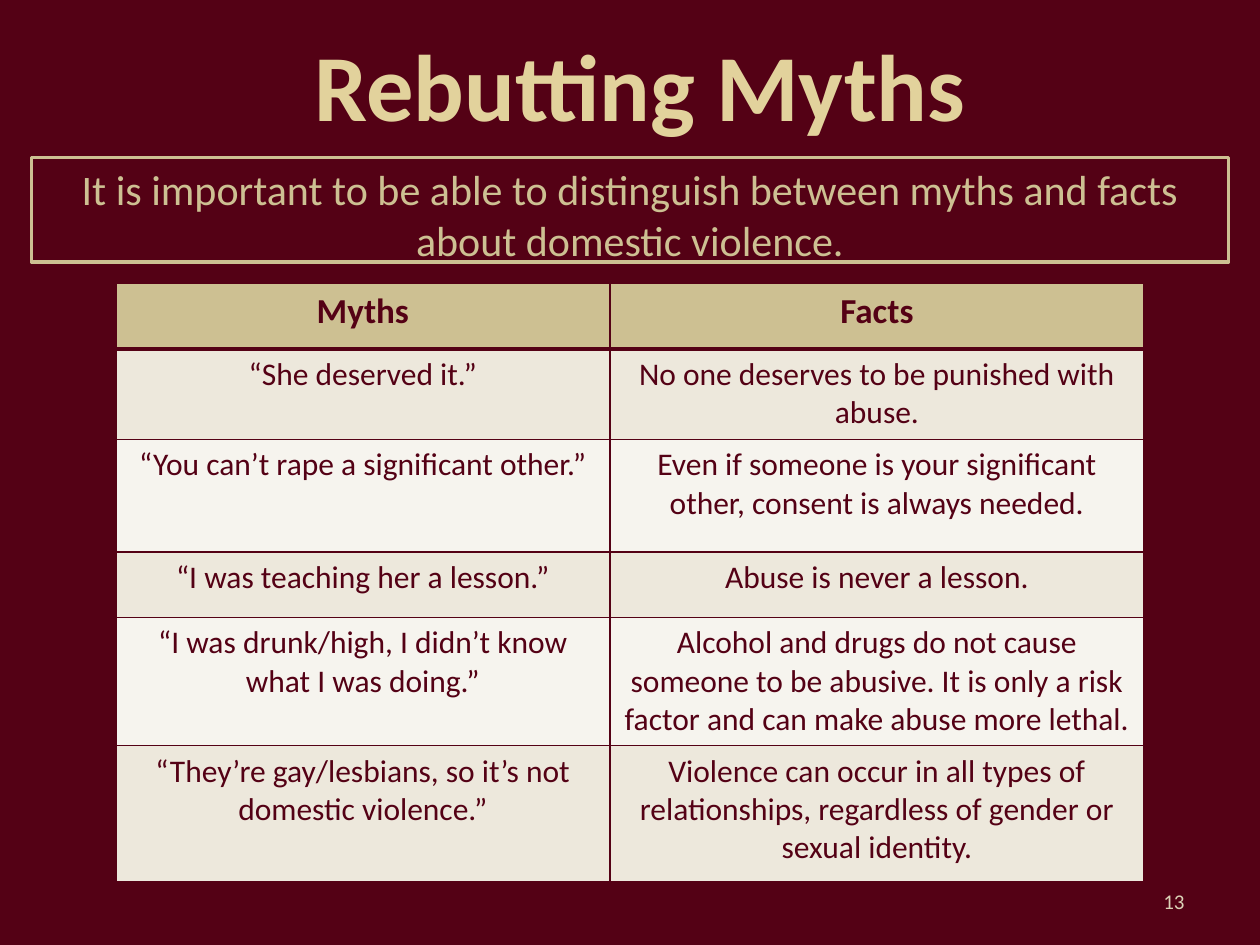
from typing import NamedTuple

from lxml import etree
from pptx import Presentation
from pptx import util as u
from pptx.dml.color import RGBColor
from pptx.enum import shapes, text
from pptx.oxml import ns

MAROON, GOLD = "540115", "CDC092"
BANDS = ("EDE8DC", "F6F4EE")
COLUMN_WIDTHS = (3.92, 4.24)


class TextStyle(NamedTuple):
    """Look of one run and its paragraph."""
    size: int
    color: str
    bold: bool = False
    alignment: text.PP_ALIGN = text.PP_ALIGN.CENTER


class Row(NamedTuple):
    """One myth, its rebuttal and the row height in inches."""
    myth: str
    fact: str
    height: float


HEADER_STYLE = TextStyle(20, MAROON, bold=True)
CELL_STYLE = TextStyle(18, MAROON)
ROWS = (
    Row("Myths", "Facts", 0.52),
    Row("“She deserved it.”", "No one deserves to be punished with abuse.", 0.72),
    Row("“You can’t rape a significant other.”",
        "Even if someone is your significant other, consent is always needed.", 0.89),
    Row("“I was teaching her a lesson.”", "Abuse is never a lesson.", 0.52),
    Row("“I was drunk/high, I didn’t know what I was doing.”",
        "Alcohol and drugs do not cause someone to be abusive. It is only a risk "
        "factor and can make abuse more lethal.", 1.02),
    Row("“They’re gay/lesbians, so it’s not domestic violence.”",
        "Violence can occur in all types of relationships, regardless of gender or "
        "sexual identity.", 1.08),
)


def rgb(color: str) -> RGBColor:
    """Turn a hex string into a colour."""
    return RGBColor.from_string(color)


def box(left: float, top: float, width: float, height: float) -> tuple:
    """Give a position and size in inches."""
    return tuple(u.Inches(length) for length in (left, top, width, height))


def write(frame, words: str, style: TextStyle):
    """Write one styled run into the first paragraph and return the run."""
    frame.word_wrap = True
    paragraph = frame.paragraphs[0]
    paragraph.alignment = style.alignment
    run = paragraph.add_run()
    run.text = words
    run.font.name = "Calibri"
    run.font.size = u.Pt(style.size)
    run.font.bold = style.bold
    run.font.color.rgb = rgb(style.color)
    return run


def make_line(tag: str, color: str, points: float):
    """Make a solid line element."""
    line = etree.Element(ns.qn(tag), w=str(u.Pt(points)))
    fill = etree.SubElement(line, ns.qn("a:solidFill"))
    etree.SubElement(fill, ns.qn("a:srgbClr"), val=color)
    return line


def add_title(slide) -> None:
    """Place and format the title."""
    title = slide.shapes.title
    title.left, title.top, title.width, title.height = box(0.58, 0.08, 9, 1.17)
    title.text_frame.vertical_anchor = text.MSO_ANCHOR.MIDDLE
    run = write(title.text_frame, "Rebutting Myths", TextStyle(54, "E2D29C", bold=True))
    run.font._element.insert(0, make_line("a:ln", "550014", 1))


def add_statement(slide) -> None:
    """Add the outlined statement under the title."""
    shape = slide.shapes.add_shape(shapes.MSO_SHAPE.RECTANGLE, *box(0.25, 1.25, 9.5, 0.83))
    shape.shadow.inherit = False
    shape.fill.solid()
    shape.fill.fore_color.rgb = rgb(MAROON)
    shape.line.color.rgb = rgb(GOLD)
    shape.line.width = u.Pt(2)
    frame = shape.text_frame
    frame.vertical_anchor = text.MSO_ANCHOR.TOP
    write(frame, "It is important to be able to distinguish between myths and facts "
          "about domestic violence.", TextStyle(24, GOLD))
    frame.paragraphs[0].space_before = u.Pt(4.8)


def format_cell(cell, words: str, row_index: int) -> None:
    """Write, border and fill one table cell."""
    is_header = row_index == 0
    write(cell.text_frame, words, HEADER_STYLE if is_header else CELL_STYLE)
    properties = cell._tc.get_or_add_tcPr()
    widths = {"L": 1, "R": 1, "T": 3 if row_index == 1 else 1, "B": 3 if is_header else 1}
    for side, points in widths.items():
        properties.append(make_line(f"a:ln{side}", MAROON, points))
    cell.fill.solid()
    cell.fill.fore_color.rgb = rgb(GOLD if is_header else BANDS[(row_index - 1) % 2])


def add_myth_table(slide) -> None:
    """Add the table of myths and facts."""
    height = sum(row.height for row in ROWS)
    table = slide.shapes.add_table(len(ROWS), len(COLUMN_WIDTHS),
                                   *box(0.92, 2.25, sum(COLUMN_WIDTHS), height)).table
    for column, width in zip(table.columns, COLUMN_WIDTHS):
        column.width = u.Inches(width)
    for row_index, row in enumerate(ROWS):
        table.rows[row_index].height = u.Inches(row.height)
        for column_index, words in enumerate((row.myth, row.fact)):
            format_cell(table.cell(row_index, column_index), words, row_index)


def add_page_number(slide) -> None:
    """Add the page number at the lower right."""
    frame = slide.shapes.add_textbox(*box(7.17, 6.95, 2.33, 0.4)).text_frame
    frame.vertical_anchor = text.MSO_ANCHOR.MIDDLE
    write(frame, "13", TextStyle(12, "DBD2B6", alignment=text.PP_ALIGN.RIGHT))


def main() -> None:
    """Build and save the slide."""
    presentation = Presentation()
    presentation.slide_width, presentation.slide_height = u.Inches(10), u.Inches(7.5)
    slide = presentation.slides.add_slide(presentation.slide_layouts[5])
    slide.background.fill.solid()
    slide.background.fill.fore_color.rgb = rgb(MAROON)
    add_title(slide)
    add_statement(slide)
    add_page_number(slide)
    add_myth_table(slide)
    presentation.save("out.pptx")


if __name__ == "__main__":
    main()
